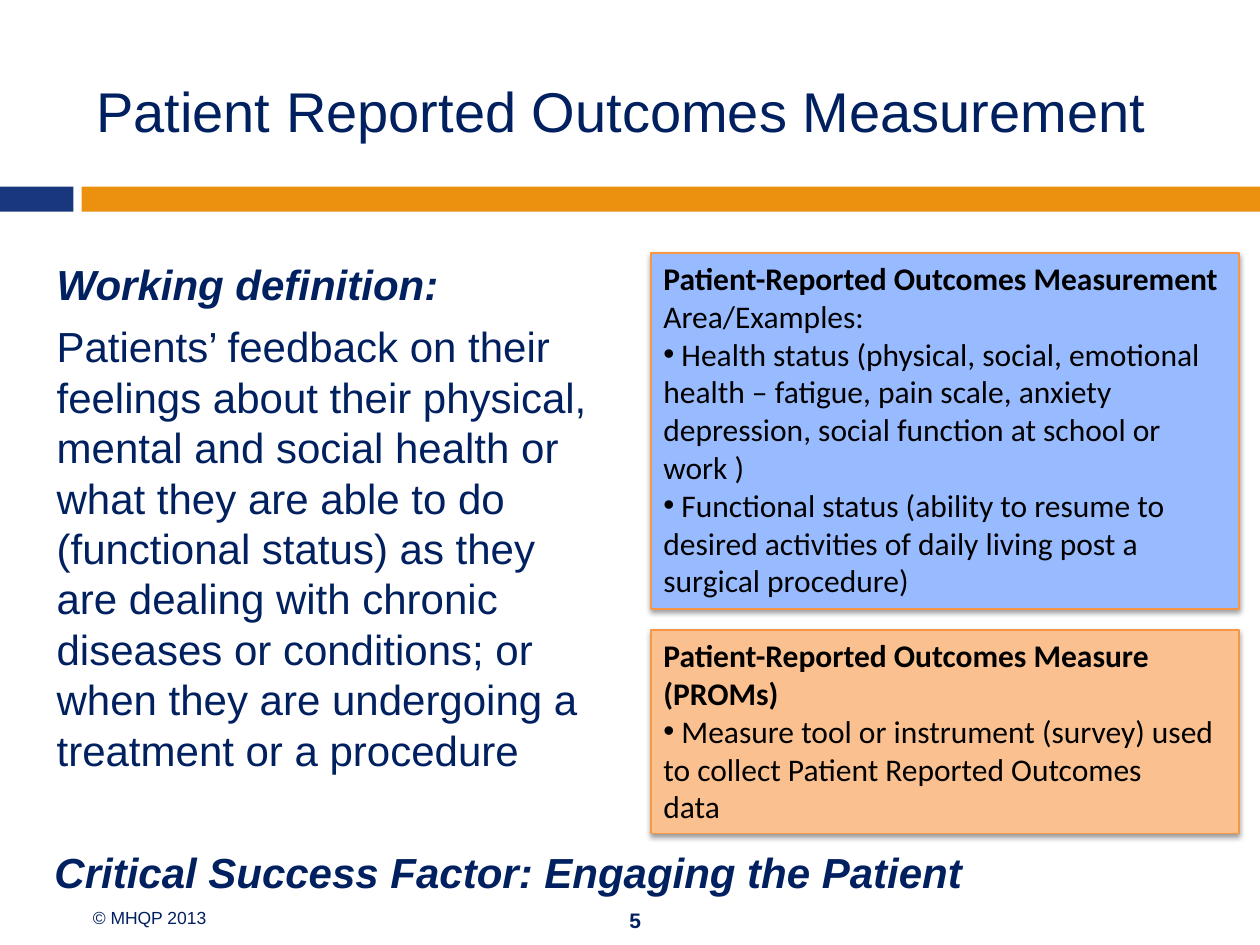
from lxml import etree
from pptx import Presentation
from pptx.dml.color import RGBColor
from pptx.enum.shapes import MSO_SHAPE as SHAPE
from pptx.enum.text import MSO_ANCHOR as ANCHOR, PP_ALIGN as ALIGN
from pptx.oxml import parse_xml
from pptx.oxml.ns import nsdecls, qn
from pptx.util import Pt

COLORS = {
    "navy": "002060", "blue": "19377D", "orange": "EB910F", "black": "000000",
    "light_blue": "98BAFF", "light_orange": "FAC090", "border": "F79646",
}
PANEL_LEFT, PANEL_WIDTH = 372, 336


def rgb(name):
    return RGBColor.from_string(COLORS[name])


def add_run(p, text, size, color="navy", font="Arial", bold=False, italic=False):
    r = p.add_run()
    r.text = text
    f = r.font
    f.name, f.size, f.bold, f.italic = font, Pt(size), bold, italic
    f.color.rgb = rgb(color)


def add_text(s, left, top, width, height, wrap=True, anchor=ANCHOR.TOP):
    tf = s.shapes.add_textbox(Pt(left), Pt(top), Pt(width), Pt(height)).text_frame
    tf.word_wrap = wrap
    tf.vertical_anchor = anchor
    return tf


def add_box(s, left, top, width, height, fill):
    sp = s.shapes.add_shape(SHAPE.RECTANGLE, Pt(left), Pt(top), Pt(width), Pt(height))
    sp.shadow.inherit = False
    sp.fill.solid()
    sp.fill.fore_color.rgb = rgb(fill)
    sp.line.fill.background()
    return sp


def add_bullet(p):
    pPr = p._p.get_or_add_pPr()
    etree.SubElement(pPr, qn("a:buFont"), typeface="Arial")
    etree.SubElement(pPr, qn("a:buChar"), char="•")


def add_shadow(sp):
    """Soft shadow falling straight down."""
    effects = sp._element.spPr.find(qn("a:effectLst"))
    effects.append(parse_xml(
        f'<a:outerShdw {nsdecls("a")} blurRad="{Pt(3.1)}" dist="{Pt(1.6)}" '
        'dir="5400000" rotWithShape="0">'
        f'<a:srgbClr val="{COLORS["black"]}"><a:alpha val="38000"/></a:srgbClr>'
        '</a:outerShdw>'))


def add_panel(s, top, height, fill, paragraphs):
    """Bordered box; each paragraph is a (kind, text) pair."""
    sp = add_box(s, PANEL_LEFT, top, PANEL_WIDTH, height, fill)
    sp.line.color.rgb = rgb("border")
    sp.line.width = Pt(0.75)
    add_shadow(sp)
    tf = sp.text_frame
    tf.word_wrap = True
    tf.vertical_anchor = ANCHOR.TOP
    for i, (kind, text) in enumerate(paragraphs):
        p = tf.add_paragraph() if i else tf.paragraphs[0]
        p.alignment = ALIGN.LEFT
        if kind == "bullet":
            add_bullet(p)
            text = " " + text
        add_run(p, text, 18, "black", "Calibri", bold=kind == "heading")


def add_definition(s):
    tf = add_text(s, 0, 144, 354, 276)
    tf.margin_left = Pt(32.4)
    add_run(tf.paragraphs[0], "Working definition:", 24, bold=True, italic=True)
    p = tf.add_paragraph()
    p.space_before = Pt(7)
    add_run(p, "Patients’ feedback on their feelings about their physical, mental and "
               "social health or what they are able to do (functional status) as they "
               "are dealing with chronic diseases or conditions; or when they are "
               "undergoing a treatment or a procedure", 24)


def main():
    prs = Presentation()
    prs.slide_width, prs.slide_height = Pt(720), Pt(540)
    s = prs.slides.add_slide(prs.slide_layouts[6])

    add_box(s, 0, 106.6, 42, 14.4, "blue")
    add_box(s, 46.6, 106.6, 673.4, 14.4, "orange")

    title = add_text(s, 48, 24, 642, 78, anchor=ANCHOR.MIDDLE)
    add_run(title.paragraphs[0], "Patient Reported Outcomes Measurement", 32)

    add_definition(s)
    add_panel(s, 144.5, 203.5, "light_blue", [
        ("heading", "Patient-Reported Outcomes Measurement"),
        ("plain", "Area/Examples:"),
        ("bullet", "Health status (physical, social, emotional health – fatigue, pain "
                   "scale, anxiety depression, social function at school or work )"),
        ("bullet", "Functional status (ability to resume to desired activities of daily "
                   "living post a surgical procedure)"),
    ])
    add_panel(s, 360, 116.5, "light_orange", [
        ("heading", "Patient-Reported Outcomes Measure"),
        ("heading", "(PROMs)"),
        ("bullet", "Measure tool or instrument (survey) used to collect Patient "
                   "Reported Outcomes"),
        ("plain", "data"),
    ])

    factor = add_text(s, 24, 480, 558, 42)
    add_run(factor.paragraphs[0], "Critical Success Factor: Engaging the Patient", 24,
            bold=True, italic=True)

    copyright_line = add_text(s, 46, 515, 80, 19.4, wrap=False)
    add_run(copyright_line.paragraphs[0], "© MHQP 2013", 10)
    number = add_text(s, 342, 516, 42, 19.4, anchor=ANCHOR.MIDDLE)
    number.paragraphs[0].alignment = ALIGN.CENTER
    add_run(number.paragraphs[0], "5", 12, bold=True)

    prs.save("out.pptx")


if __name__ == "__main__":
    main()
